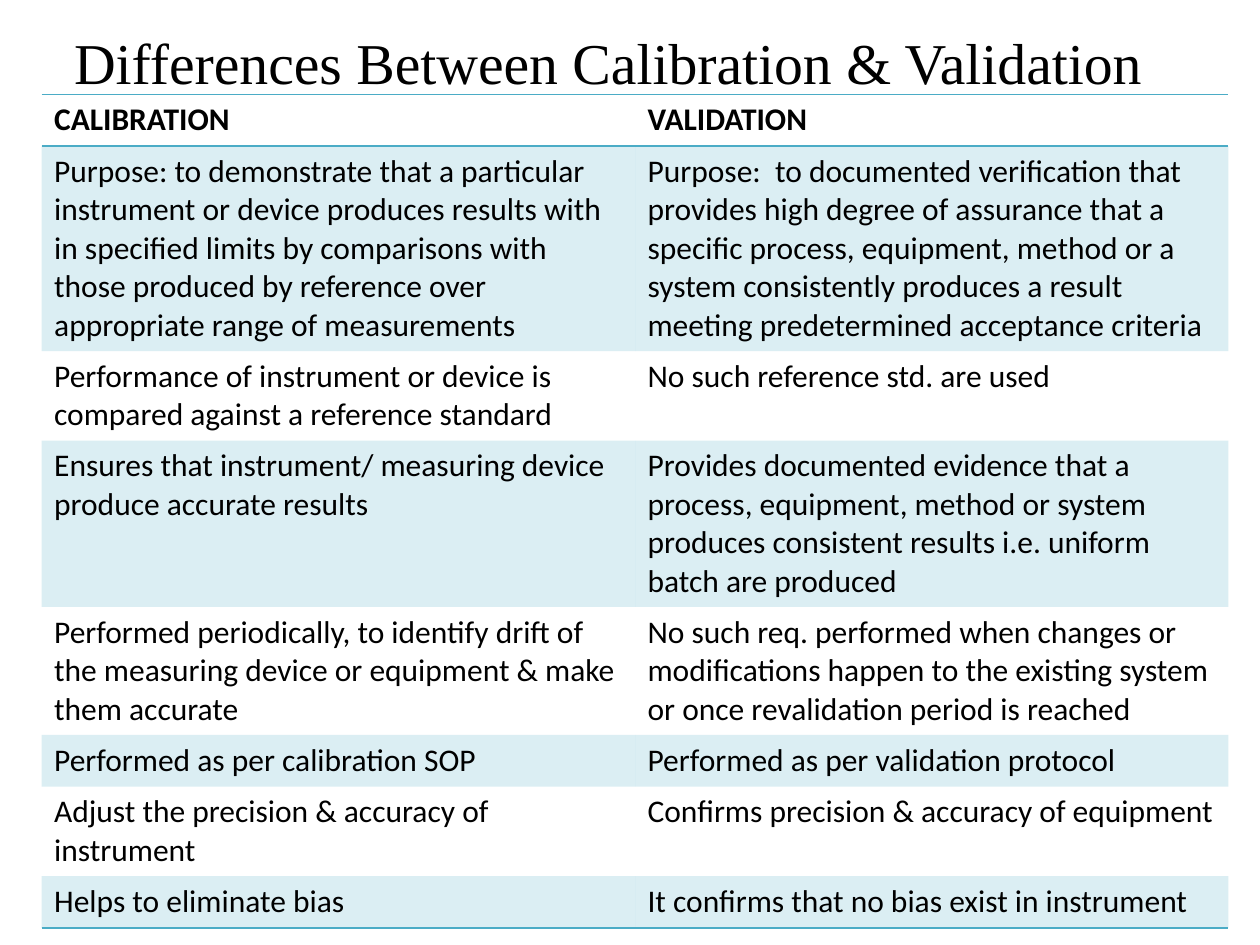
from lxml import etree
from pptx import Presentation
from pptx.dml.color import RGBColor
from pptx.enum.text import MSO_ANCHOR, MSO_AUTO_SIZE, PP_ALIGN
from pptx.oxml.ns import qn
from pptx.util import Inches, Pt

MIDDLE = MSO_ANCHOR.MIDDLE
NO_AUTOFIT = MSO_AUTO_SIZE.NONE
CENTER = PP_ALIGN.CENTER

HEADING = "Differences Between Calibration & Validation"
COMPARISON = [
    ("CALIBRATION", "VALIDATION"),
    ("Purpose: to demonstrate that a particular instrument or device produces results with "
     "in specified limits by comparisons with those produced by reference over "
     "appropriate range of measurements",
     "Purpose:  to documented verification that provides high degree of assurance that a "
     "specific process, equipment, method or a system consistently produces a result "
     "meeting predetermined acceptance criteria"),
    ("Performance of instrument or device is compared against a reference standard",
     "No such reference std. are used"),
    ("Ensures that instrument/ measuring device produce accurate results",
     "Provides documented evidence that a process, equipment, method or system produces "
     "consistent results i.e. uniform batch are produced"),
    ("Performed periodically, to identify drift of the measuring device or equipment & make "
     "them accurate",
     "No such req. performed when changes or modifications happen to the existing system "
     "or once revalidation period is reached"),
    ("Performed as per calibration SOP", "Performed as per validation protocol"),
    ("Adjust the precision & accuracy of instrument",
     "Confirms precision & accuracy of equipment"),
    ("Helps to eliminate bias", "It confirms that no bias exist in instrument"),
]

THEME = {
    "accent": "4BACC6",
    "band_opacity": 20,
    "rule_width": Pt(1),
    "title": {"name": "Times New Roman", "size": Pt(33), "bold": False},
    "header": {"name": "Calibri", "size": Pt(18), "bold": True},
    "body": {"name": "Calibri", "size": Pt(18), "bold": False},
    "ink": RGBColor(0, 0, 0),
}
PLAIN_TABLE_STYLE = "{2D5ABB26-0587-4C30-8999-92F81FD0307C}"

LEFT = Inches(0.33)
TITLE_BOX = {"left": LEFT, "top": Inches(0.17), "width": Inches(9), "height": Inches(0.63)}
TABLE_TOP = Inches(0.75)
COLUMN_WIDTH = Inches(4.71)
ROW_HEIGHT = Inches(0.41)


def apply(target, values):
    for attribute, value in values.items():
        setattr(target, attribute, value)


def style_text(paragraph, role):
    apply(paragraph.font, THEME[role])
    paragraph.font.color.rgb = THEME["ink"]


def add_rule(cell, edge):
    rule = etree.SubElement(cell._tc.get_or_add_tcPr(), qn(f"a:{edge}"), w=str(THEME["rule_width"]))
    paint = etree.SubElement(rule, qn("a:solidFill"))
    etree.SubElement(paint, qn("a:srgbClr"), val=THEME["accent"])


def fill_band(cell):
    cell.fill.solid()
    cell.fill.fore_color.rgb = RGBColor.from_string(THEME["accent"])
    tint = cell._tc.tcPr.find(".//" + qn("a:solidFill") + "[last()]")
    tint = cell._tc.tcPr.find(qn("a:solidFill")).find(qn("a:srgbClr"))
    etree.SubElement(tint, qn("a:alpha"), val=str(THEME["band_opacity"] * 1000))


def add_heading(slide):
    title = slide.shapes.title
    apply(title, TITLE_BOX)
    title.text = HEADING
    apply(title.text_frame, {"vertical_anchor": MIDDLE, "auto_size": NO_AUTOFIT, "word_wrap": True})
    paragraph = title.text_frame.paragraphs[0]
    paragraph.alignment = CENTER
    style_text(paragraph, "title")


def add_comparison(slide):
    rows, columns = len(COMPARISON), len(COMPARISON[0])
    table = slide.shapes.add_table(
        rows, columns, LEFT, TABLE_TOP, COLUMN_WIDTH * columns, ROW_HEIGHT * rows
    ).table
    table._tbl.tblPr.find(qn("a:tableStyleId")).text = PLAIN_TABLE_STYLE
    edges = {0: ("lnT", "lnB"), rows - 1: ("lnB",)}
    for column in table.columns:
        column.width = COLUMN_WIDTH
    for r, entries in enumerate(COMPARISON):
        table.rows[r].height = ROW_HEIGHT
        for c, entry in enumerate(entries):
            cell = table.cell(r, c)
            cell.text = entry
            style_text(cell.text_frame.paragraphs[0], "body" if r else "header")
            for edge in edges.get(r, ()):
                add_rule(cell, edge)
            if r % 2:
                fill_band(cell)
            else:
                cell.fill.background()


def main():
    deck = Presentation()
    apply(deck, {"slide_width": Inches(10), "slide_height": Inches(7.5)})
    slide = deck.slides.add_slide(deck.slide_layouts[5])
    add_heading(slide)
    add_comparison(slide)
    deck.save("out.pptx")


if __name__ == "__main__":
    main()
